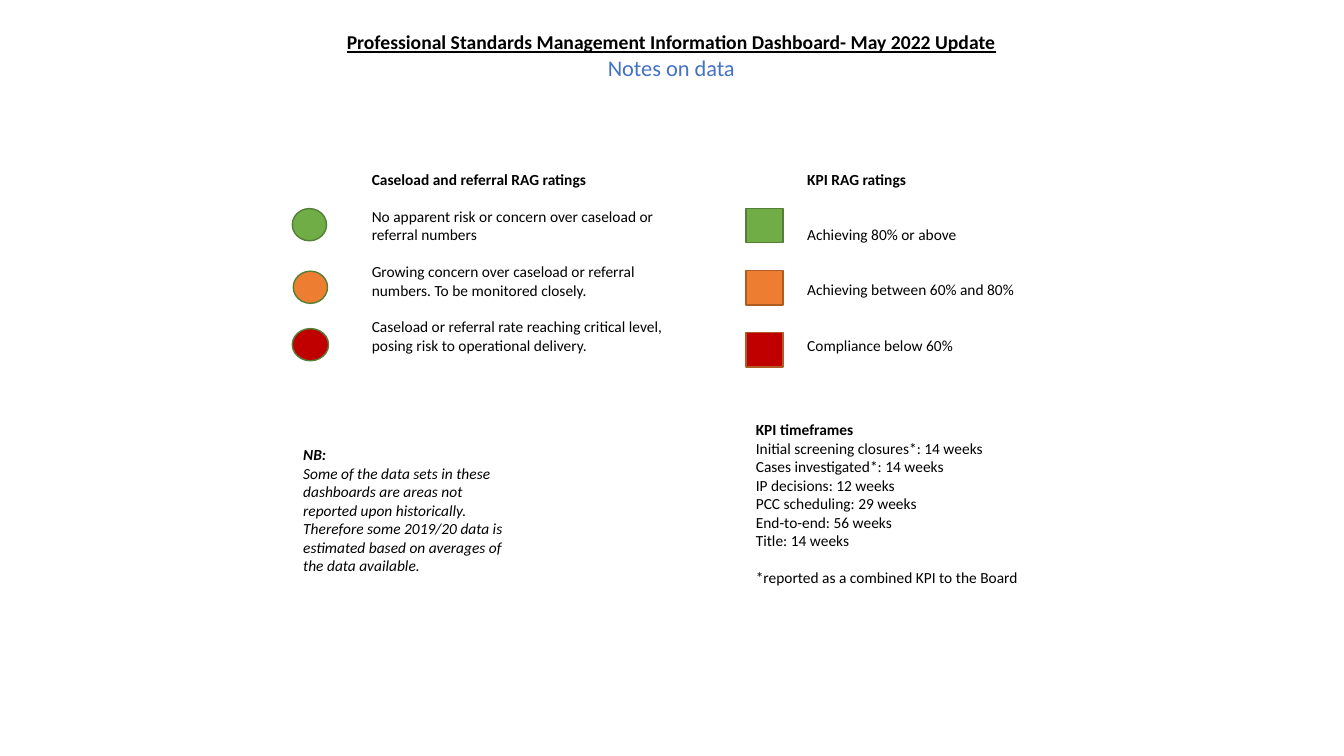
from dataclasses import dataclass

import pptx
import pptx.dml.color
import pptx.enum.shapes
import pptx.enum.text
import pptx.presentation
import pptx.slide
import pptx.util

Pt = pptx.util.Pt
Align = pptx.enum.text.PP_ALIGN
Preset = pptx.enum.shapes.MSO_SHAPE


@dataclass(frozen=True)
class Theme:
    """Colours and type sizes of the slide."""

    font: str = "Calibri"
    black: str = "000000"
    blue: str = "4472C4"
    green: str = "70AD47"
    amber: str = "ED7D31"
    red: str = "C00000"
    green_line: str = "538035"
    amber_line: str = "AF5C24"
    title_size: float = 14
    subtitle_size: float = 16
    body_size: float = 11
    line_height: float = 13.2


THEME = Theme()


@dataclass(frozen=True)
class Line:
    """A paragraph, with the number of lines left free above it."""

    text: str
    bold: bool = False
    italic: bool = False
    underline: bool = False
    size: float = THEME.body_size
    color: str = THEME.black
    gap: int = 0


@dataclass(frozen=True)
class Note:
    """A text box; free_lines moves its first line down."""

    left: float
    top: float
    width: float
    height: float
    lines: tuple[Line, ...]
    align: Align = Align.LEFT
    free_lines: int = 0


@dataclass(frozen=True)
class Marker:
    """A coloured rating symbol."""

    preset: Preset
    left: float
    top: float
    width: float
    height: float
    fill: str
    outline: str


TIMEFRAMES = (
    "Initial screening closures*: 14 weeks",
    "Cases investigated*: 14 weeks",
    "IP decisions: 12 weeks",
    "PCC scheduling: 29 weeks",
    "End-to-end: 56 weeks",
    "Title: 14 weeks",
)
CASELOAD_RATINGS = (
    "No apparent risk or concern over caseload or referral numbers",
    "Growing concern over caseload or referral numbers. To be monitored closely.",
    "Caseload or referral rate reaching critical level, posing risk to operational delivery.",
)
KPI_RATINGS = ("Achieving 80% or above", "Achieving between 60% and 80%", "Compliance below 60%")

NOTES = (
    Note(219.6, 18, 519.8, 43.9, (
        Line("Professional Standards Management Information Dashboard- May 2022 Update",
             bold=True, underline=True, size=THEME.title_size),
        Line("Notes on data", size=THEME.subtitle_size, color=THEME.blue),
    ), align=Align.CENTER),
    Note(209.5, 314.6, 165.6, 100.8, (
        Line("NB:", bold=True, italic=True),
        Line("Some of the data sets in these dashboards are areas not reported upon "
             "historically. Therefore some 2019/20 data is estimated based on averages "
             "of the data available.", italic=True),
    )),
    Note(532.8, 296.6, 228.2, 127.4, (
        Line("KPI timeframes", bold=True),
        *(Line(text) for text in TIMEFRAMES),
        Line("*reported as a combined KPI to the Board", gap=1),
    )),
    Note(258.5, 104.4, 228.2, 220.3, (
        Line("Caseload and referral RAG ratings", bold=True),
        *(Line(text, gap=1) for text in CASELOAD_RATINGS),
    ), free_lines=1),
    Note(569.5, 104.4, 228.2, 234, (
        Line("KPI RAG ratings", bold=True),
        *(Line(text, gap=2) for text in KPI_RATINGS),
    ), free_lines=1),
)

KPI_TOP, KPI_STEP = 149, 44.3
KPI_COLORS = (
    (THEME.green, THEME.green_line),
    (THEME.amber, THEME.amber_line),
    (THEME.red, THEME.amber_line),
)
MARKERS = (
    Marker(Preset.OVAL, 208.8, 149, 24.5, 23, THEME.green, THEME.green_line),
    Marker(Preset.OVAL, 209.5, 193.7, 24.5, 23, THEME.amber, THEME.green_line),
    Marker(Preset.OVAL, 208.8, 234.7, 25.9, 23, THEME.red, THEME.green_line),
    *(Marker(Preset.RECTANGLE, 532.8, KPI_TOP + row * KPI_STEP, 26.6, 24.5, fill, outline)
      for row, (fill, outline) in enumerate(KPI_COLORS)),
)


def rgb(value: str) -> pptx.dml.color.RGBColor:
    """Return the colour for a hexadecimal value."""
    return pptx.dml.color.RGBColor.from_string(value)


def add_note(slide: pptx.slide.Slide, note: Note) -> None:
    """Add a text box and its paragraphs."""
    shape = slide.shapes.add_textbox(
        Pt(note.left), Pt(note.top), Pt(note.width), Pt(note.height))
    frame = shape.text_frame
    frame.word_wrap = True
    frame.auto_size = pptx.enum.text.MSO_AUTO_SIZE.SHAPE_TO_FIT_TEXT
    frame.margin_top = Pt(3.6 + note.free_lines * THEME.line_height)
    for index, line in enumerate(note.lines):
        paragraph = frame.add_paragraph() if index else frame.paragraphs[0]
        paragraph.alignment = note.align
        paragraph.space_before = Pt(line.gap * THEME.line_height)
        run = paragraph.add_run()
        run.text = line.text
        run.font.name = THEME.font
        run.font.size = Pt(line.size)
        run.font.bold = line.bold
        run.font.italic = line.italic
        run.font.underline = line.underline
        run.font.color.rgb = rgb(line.color)


def add_marker(slide: pptx.slide.Slide, marker: Marker) -> None:
    """Add a rating symbol."""
    shape = slide.shapes.add_shape(
        marker.preset, Pt(marker.left), Pt(marker.top), Pt(marker.width), Pt(marker.height))
    shape.shadow.inherit = False
    shape.fill.solid()
    shape.fill.fore_color.rgb = rgb(marker.fill)
    shape.line.color.rgb = rgb(marker.outline)
    shape.line.width = Pt(1)


def main() -> None:
    """Build and save the slide."""
    presentation = pptx.Presentation()
    presentation.slide_width = Pt(960)
    presentation.slide_height = Pt(540)
    slide = presentation.slides.add_slide(presentation.slide_layouts[6])
    for note in NOTES:
        add_note(slide, note)
    for marker in MARKERS:
        add_marker(slide, marker)
    presentation.save("out.pptx")


if __name__ == "__main__":
    main()
